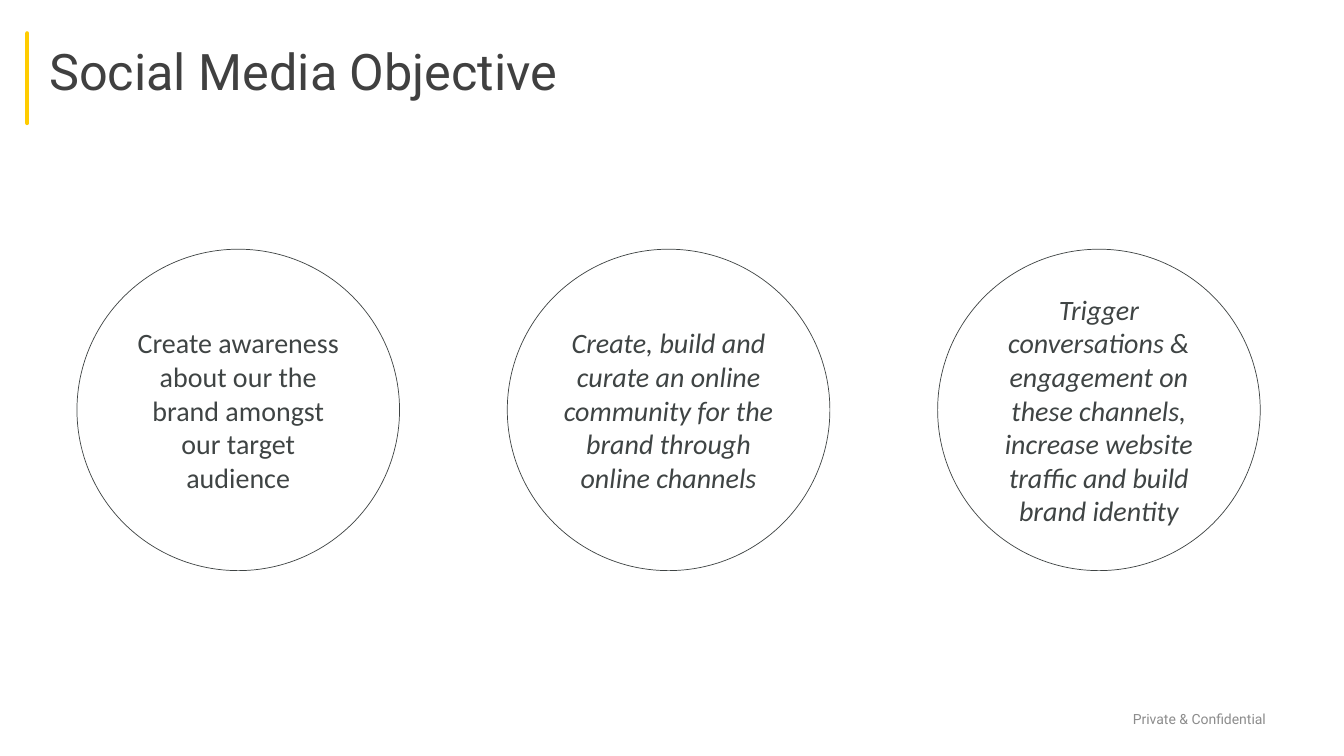
from dataclasses import dataclass

from lxml import etree
from pptx import Presentation
from pptx.dml.color import RGBColor as Rgb
from pptx.enum import shapes as sh, text as tx
from pptx.oxml import ns
from pptx.util import Cm, Pt


@dataclass(frozen=True)
class Theme:
    accent: str = "FFCC00"
    title: str = "404040"
    ink: str = "3F4444"
    mute: str = "8C8C8C"
    head: str = "Roboto"
    body: str = "Calibri"
    big: int = 36
    mid: int = 20
    small: int = 10


THEME = Theme()
GOALS = [
    ("Create awareness about our the brand amongst our target audience", False),
    ("Create, build and curate an online community for the brand "
     "through online channels", True),
    ("Trigger conversations & engagement on these channels, "
     "increase website traffic and build brand identity", True),
]


def write(frame, words, font, size, color, align, slant=False):
    """Put one styled run in the frame, centred vertically."""
    frame.word_wrap = True
    frame.vertical_anchor = tx.MSO_ANCHOR.MIDDLE
    para = frame.paragraphs[0]
    para.alignment = align
    run = para.add_run()
    run.text = words
    run.font.name, run.font.size = font, Pt(size)
    run.font.color.rgb = Rgb.from_string(color)
    run.font.italic = slant
    return para


def add_head(slide, x, y, w, h):
    """Accent bar at the left of the box, title beside it."""
    bar = slide.shapes.add_connector(
        sh.MSO_CONNECTOR.STRAIGHT, x, y + Cm(0.1), x, y + h)
    bar.line.color.rgb = Rgb.from_string(THEME.accent)
    bar.line.width = Pt(3)
    bar.line._get_or_add_ln().set("cap", "rnd")
    etree.SubElement(bar._element.spPr, ns.qn("a:effectLst"))

    title = slide.shapes.title
    title.left, title.top = x + Cm(0.3), y
    title.width, title.height = w - Cm(0.3), h - Cm(0.08)
    frame = title.text_frame
    frame.auto_size = tx.MSO_AUTO_SIZE.NONE
    para = write(frame, "Social Media Objective", THEME.head, THEME.big,
                 THEME.title, tx.PP_ALIGN.LEFT)
    para.line_spacing = 0.9


def add_goals(slide, x, y, w, h):
    """Equal circles spread from the left to the right edge of the box."""
    size = Cm(8.13)
    step = (w - size) // (len(GOALS) - 1)
    for i, (words, slant) in enumerate(GOALS):
        disc = slide.shapes.add_shape(
            sh.MSO_SHAPE.OVAL, x + i * step, y, size, h)
        disc.shadow.inherit = False
        disc.fill.background()
        disc.line.color.rgb = Rgb.from_string(THEME.ink)
        disc.line.width = Pt(0.5)
        frame = disc.text_frame
        frame.margin_left = frame.margin_right = Cm(0.2)
        frame.margin_top = frame.margin_bottom = Cm(0.2)
        write(frame, words, THEME.body, THEME.mid, THEME.ink,
              tx.PP_ALIGN.CENTER, slant)


def add_foot(slide, x, y, w, h):
    box = slide.shapes.add_textbox(x, y, w, h)
    write(box.text_frame, "Private & Confidential", THEME.head, THEME.small,
          THEME.mute, tx.PP_ALIGN.LEFT)


def main():
    deck = Presentation()
    deck.slide_width, deck.slide_height = Cm(33.87), Cm(19.05)
    slide = deck.slides.add_slide(deck.slide_layouts[5])
    add_head(slide, Cm(0.69), Cm(0.74), Cm(24.23), Cm(2.36))
    add_goals(slide, Cm(1.94), Cm(6.28), Cm(29.82), Cm(8.1))
    add_foot(slide, Cm(28.3), Cm(17.78), Cm(4.04), Cm(0.69))
    deck.save("out.pptx")


if __name__ == "__main__":
    main()
